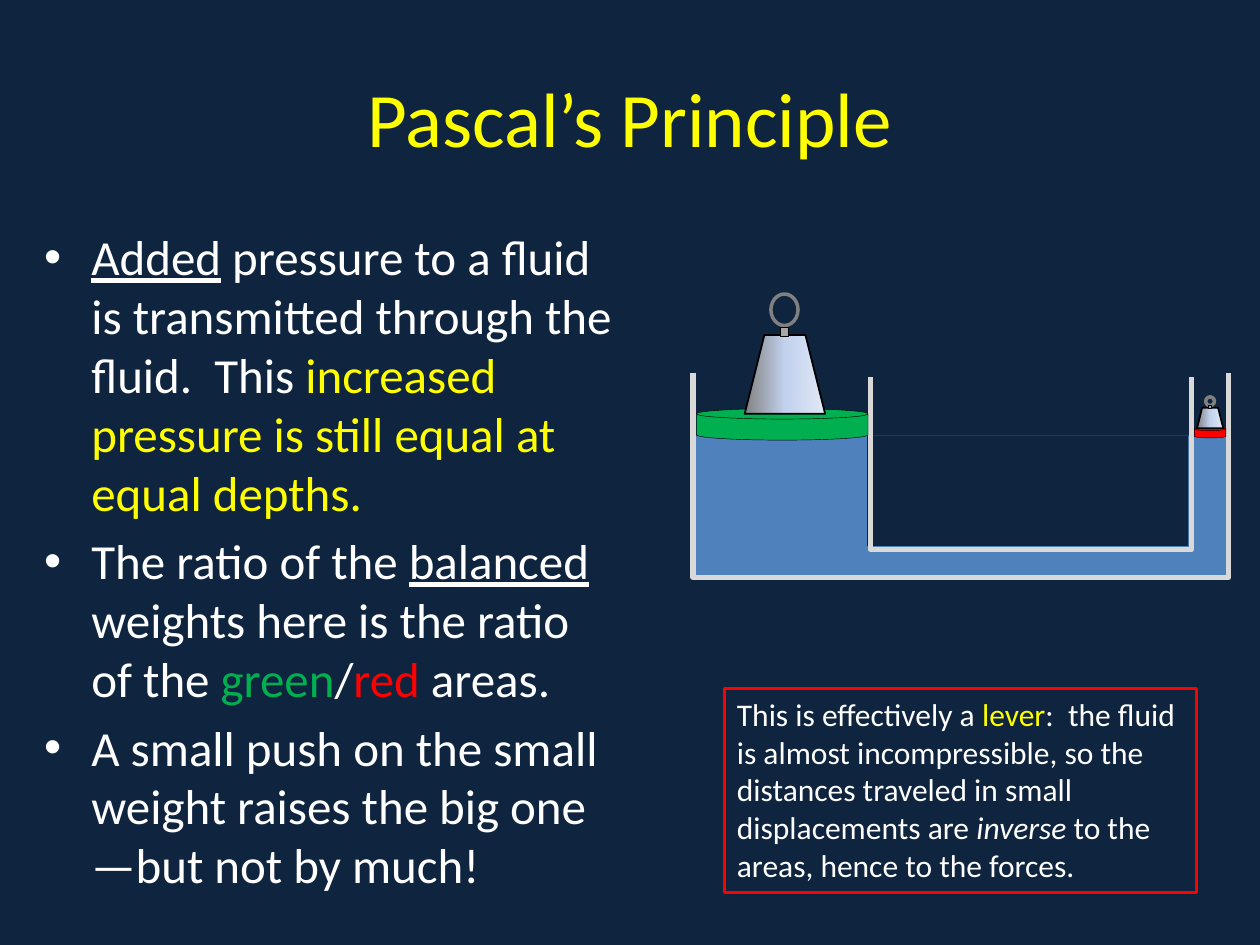
"""Build the Pascal's Principle slide with a hydraulic lift diagram."""
from copy import deepcopy

from pptx import Presentation
from pptx.dml.color import RGBColor
from pptx.enum import shapes, text
from pptx.oxml.ns import qn
from pptx.util import Pt

NAVY = RGBColor(0x0F, 0x24, 0x3E)
YELLOW = RGBColor(0xFF, 0xFF, 0x00)
WHITE = RGBColor(0xFF, 0xFF, 0xFF)
GREEN = RGBColor(0x00, 0xB0, 0x50)
RED = RGBColor(0xFF, 0x00, 0x00)
FLUID = RGBColor(0x4F, 0x81, 0xBD)
WALL = RGBColor(0xD9, 0xD9, 0xD9)
BLACK = RGBColor(0x00, 0x00, 0x00)
GREY = RGBColor(0x80, 0x80, 0x80)
NECK = RGBColor(0xA6, 0xA6, 0xA6)
STEEL = (GREY, RGBColor(0xC2, 0xD1, 0xED), RGBColor(0xE1, 0xE8, 0xF5))
KIND = shapes.MSO_SHAPE


def add_part(kind, bounds, fill=None, line=None, width=0.25):
    part = page.shapes.add_shape(kind, *map(Pt, bounds))
    part.shadow.inherit = False
    if fill is None:
        part.fill.background()
    else:
        part.fill.solid()
        part.fill.fore_color.rgb = fill
    if line is None:
        part.line.fill.background()
    else:
        part.line.color.rgb = line
        part.line.width = Pt(width)
    return part


def write(frame, paragraphs, size):
    for index, pieces in enumerate(paragraphs):
        para = frame.paragraphs[0] if index == 0 else frame.add_paragraph()
        para.font.size = Pt(size)
        para.font.name = "Calibri"
        for words, color, style in pieces:
            span = para.add_run()
            span.text = words
            span.font.color.rgb = color
            if style == "underline":
                span.font.underline = True
            elif style == "italic":
                span.font.italic = True


deck = Presentation()
deck.slide_width, deck.slide_height = Pt(720), Pt(540)
page = deck.slides.add_slide(deck.slide_layouts[1])
page.background.fill.solid()
page.background.fill.fore_color.rgb = NAVY

title, body = page.placeholders
for holder, bounds in ((title, (36, 21.6, 648, 90)), (body, (18, 126, 342, 396))):
    holder.left, holder.top, holder.width, holder.height = map(Pt, bounds)
write(title.text_frame, [[("Pascal’s Principle", YELLOW, None)]], 44)
write(body.text_frame, [
    [("Added", WHITE, "underline"),
     (" pressure to a fluid is transmitted through the fluid.  This ", WHITE, None),
     ("increased pressure is still equal at equal depths.", YELLOW, None)],
    [("The ratio of the ", WHITE, None),
     ("balanced", WHITE, "underline"),
     (" weights here is the ratio of the ", WHITE, None),
     ("green", GREEN, None),
     ("/", WHITE, None),
     ("red", RED, None),
     (" areas.", WHITE, None)],
    [("A small push on the small weight raises the big one—but not by much!", WHITE, None)],
], 28)

vessel = (
    ((396, 249, 306, 81), FLUID, (396, 213, 702, 330)),
    ((495.5, 249, 183.5, 63), NAVY, (497.5, 215.5, 681, 314)),
)
for area, color, (left, top, right, bottom) in vessel:
    add_part(KIND.RECTANGLE, area, color)
    outline = page.shapes.build_freeform(Pt(left), Pt(top))
    corners = ((left, bottom), (right, bottom), (right, top))
    outline.add_line_segments([(Pt(x), Pt(y)) for x, y in corners], close=False)
    wall = outline.convert_to_shape()
    wall.shadow.inherit = False
    wall.fill.background()
    wall.line.color.rgb = WALL
    wall.line.width = Pt(3)

add_part(KIND.FLOWCHART_MAGNETIC_DISK, (398, 233.5, 98, 18), GREEN, BLACK)
add_part(KIND.FLOWCHART_MAGNETIC_DISK, (682.5, 244, 18, 6.3), RED, BLACK)

weights = (
    ((425.5, 191.5, 46, 45), (440.5, 168, 15.5, 18), (446, 187, 4.3, 5.3)),
    ((684, 233, 15, 11.7), (689, 226.8, 5, 5), (690.5, 231.8, 1.7, 1.7)),
)
for block, ring, neck in weights:
    mass = add_part(KIND.TRAPEZOID, block, line=BLACK, width=1)
    mass.fill.gradient()
    mass.fill.gradient_angle = 0
    stop_list = mass.element.spPr.find(qn("a:gradFill")).find(qn("a:gsLst"))
    stop_list.append(deepcopy(stop_list[-1]))
    for stop, color, position in zip(mass.fill.gradient_stops, STEEL, (0, 0.5, 1)):
        stop.color.rgb = color
        stop.position = position
    add_part(KIND.OVAL, ring, line=GREY, width=2)
    add_part(KIND.RECTANGLE, neck, NECK, BLACK)

box = page.shapes.add_textbox(Pt(414), Pt(393.5), Pt(270), Pt(116.5))
box.line.color.rgb = RED
box.line.width = Pt(1.75)
box.text_frame.word_wrap = True
box.text_frame.auto_size = text.MSO_AUTO_SIZE.SHAPE_TO_FIT_TEXT
write(box.text_frame, [[
    ("This is effectively a ", WHITE, None),
    ("lever", YELLOW, None),
    (":  the fluid is almost incompressible, so the distances traveled in "
     "small displacements are ", WHITE, None),
    ("inverse", WHITE, "italic"),
    (" to the areas, hence to the forces.", WHITE, None),
]], 18)

deck.save("out.pptx")
